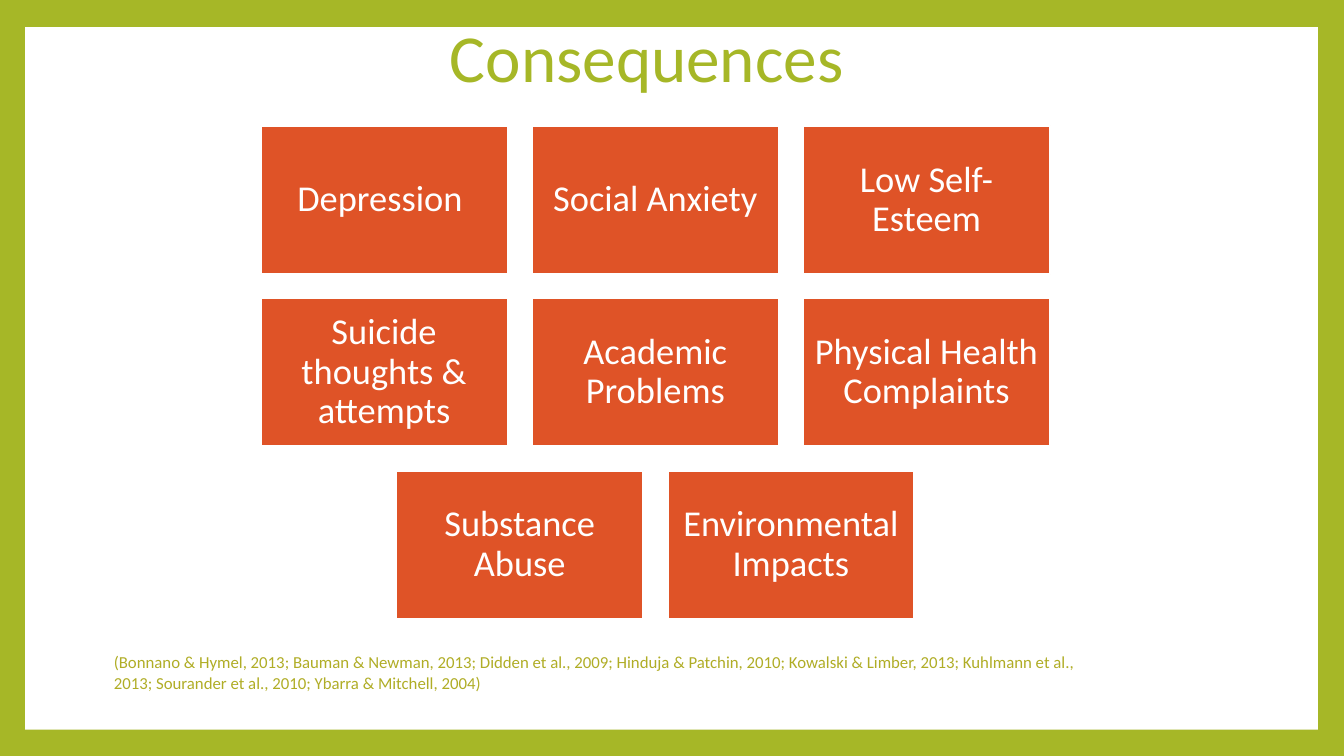
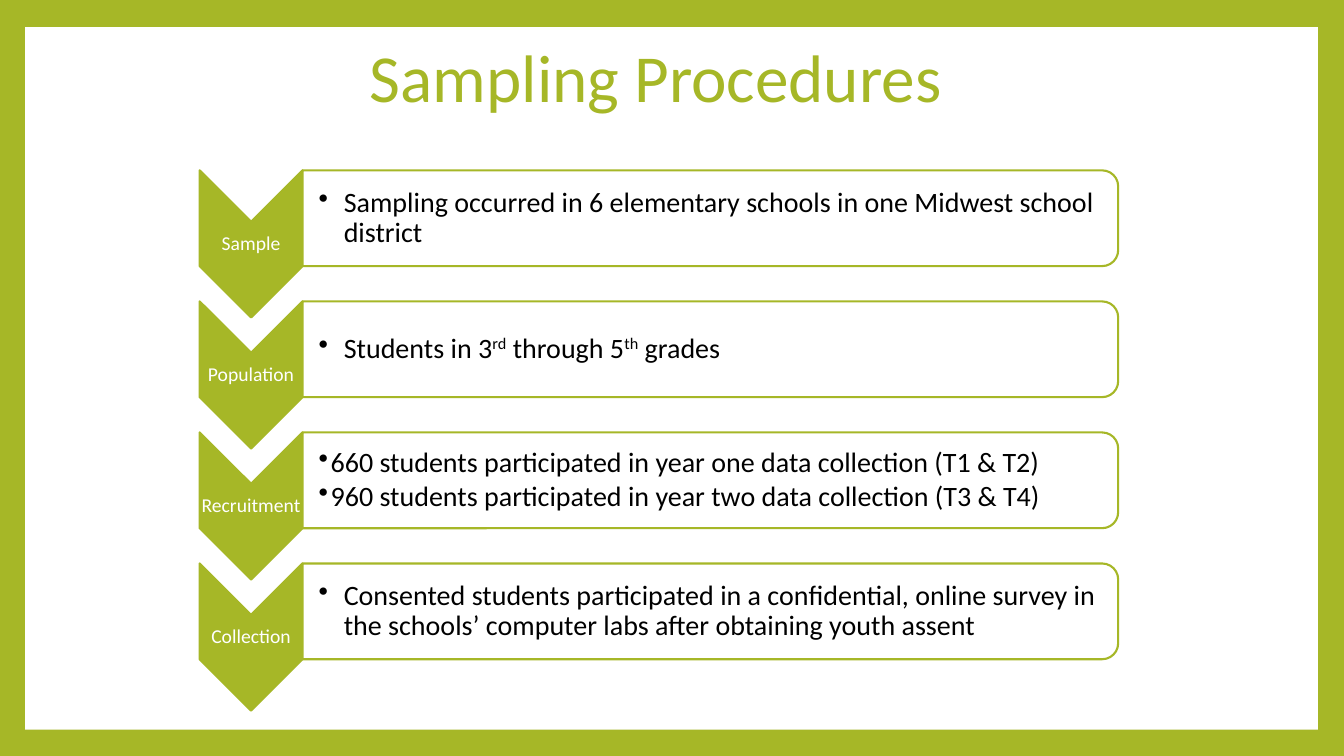
"""Build two slides on the consequences studied and the sampling procedures."""
from dataclasses import dataclass

from lxml.etree import SubElement
from pptx import Presentation
from pptx.dml.color import RGBColor
from pptx.enum.shapes import MSO_SHAPE
from pptx.enum.text import MSO_ANCHOR, PP_ALIGN
from pptx.oxml.ns import qn
from pptx.util import Inches, Pt


@dataclass(frozen=True)
class Theme:
    font: str = "Calibri"
    green: str = "A6B727"
    olive: str = "B0AD26"
    orange: str = "DF5327"
    white: str = "FFFFFF"
    black: str = "000000"
    title: int = 48
    tile: int = 26
    body: int = 20
    label: int = 14
    citation: int = 12
    outline: float = 1.5


THEME = Theme()

CONSEQUENCES = [
    ["Depression ", "Social Anxiety", "Low Self-Esteem"],
    ["Suicide thoughts & attempts", "Academic Problems", "Physical Health Complaints"],
    ["Substance Abuse", "Environmental Impacts"],
]
CITATION = (
    "(Bonnano & Hymel, 2013; Bauman & Newman, 2013; Didden et al., 2009; "
    "Hinduja & Patchin, 2010; Kowalski & Limber, 2013; Kuhlmann et al., 2013; "
    "Sourander et al., 2010; Ybarra & Mitchell, 2004)"
)

SUPERSCRIPTS = ("rd", "th")
STEPS = [
    ("Sample", 0.25, [["Sampling occurred in 6 elementary schools in one Midwest school district"]]),
    ("Population", 0.25, [["Students in 3", "rd", " through 5", "th", " grades"]]),
    ("Recruitment", 0.12, [
        ["660 students participated in year one data collection (T1 & T2)"],
        ["960 students participated in year two data collection (T3 & T4)"],
    ]),
    ("Collection", 0.25, [[
        "Consented students participated in a confidential, online survey in "
        "the schools’ computer labs after obtaining youth assent"
    ]]),
]


def rgb(color):
    return RGBColor.from_string(color)


def add_block(slide, preset, box, fill, outline=None, rotation=0):
    block = slide.shapes.add_shape(preset, *map(Inches, box))
    block.shadow.inherit = False
    block.rotation = rotation
    block.fill.solid()
    block.fill.fore_color.rgb = rgb(fill)
    if outline:
        block.line.color.rgb = rgb(outline)
        block.line.width = Pt(THEME.outline)
    else:
        block.line.fill.background()
    return block


def add_turned_block(slide, preset, box, fill, outline):
    """Add a block turned a quarter clockwise so that it fills the given box."""
    left, top, width, height = box
    shift = (width - height) / 2
    return add_block(slide, preset, (left + shift, top - shift, height, width), fill, outline, 90)


def write(shape, paragraphs, size, color, align=PP_ALIGN.CENTER, anchor=MSO_ANCHOR.MIDDLE,
          insets=(0.1, 0.05, 0.1, 0.05), spacing=0.9, after=0, indent=0):
    frame = shape.text_frame
    frame.word_wrap = True
    frame.vertical_anchor = anchor
    frame.margin_left, frame.margin_top, frame.margin_right, frame.margin_bottom = map(Inches, insets)
    for index, runs in enumerate(paragraphs):
        paragraph = frame.add_paragraph() if index else frame.paragraphs[0]
        paragraph.alignment = align
        paragraph.line_spacing = spacing
        paragraph.space_after = Pt(after)
        paragraph.font.name = THEME.font
        paragraph.font.size = Pt(size)
        paragraph.font.color.rgb = rgb(color)
        for text in runs:
            run = paragraph.add_run()
            run.text = text
            if text in SUPERSCRIPTS:
                run.font._element.set("baseline", "30000")
        if indent:
            add_bullet(paragraph, indent)


def add_bullet(paragraph, indent):
    properties = paragraph._p.get_or_add_pPr()
    properties.set("marL", str(Inches(indent)))
    properties.set("indent", str(-Inches(indent)))
    bullet = SubElement(properties, qn("a:buChar"))
    bullet.set("char", "•")
    defaults = properties.find(qn("a:defRPr"))
    if defaults is not None:
        defaults.addprevious(bullet)


def add_text(slide, box, paragraphs, size, color, **style):
    write(slide.shapes.add_textbox(*map(Inches, box)), paragraphs, size, color, **style)


def add_framed_slide(deck, title, title_box, anchor):
    slide = deck.slides.add_slide(deck.slide_layouts[6])
    slide.background.fill.solid()
    slide.background.fill.fore_color.rgb = rgb(THEME.green)
    add_block(slide, MSO_SHAPE.RECTANGLE, (0.25, 0.27, 12.82, 6.97), THEME.white)
    add_text(slide, title_box, [[title]], THEME.title, THEME.green, anchor=anchor)
    return slide


def build_consequences(deck):
    slide = add_framed_slide(deck, "Consequences", (1.66, -0.02, 9.51, 1.25), MSO_ANCHOR.MIDDLE)
    add_text(slide, (1.03, 6.42, 9.75, 0.5), [[CITATION]], THEME.citation, THEME.olive,
             align=PP_ALIGN.LEFT, anchor=MSO_ANCHOR.TOP, spacing=1)
    center, top, width, height, gap = 6.5, 1.25, 2.45, 1.47, 0.24
    for row, names in enumerate(CONSEQUENCES):
        left = center - (len(names) * (width + gap) - gap) / 2
        for column, name in enumerate(names):
            box = (left + column * (width + gap), top + row * (height + gap), width, height)
            tile = add_block(slide, MSO_SHAPE.RECTANGLE, box, THEME.orange, THEME.white)
            write(tile, [[name]], THEME.tile, THEME.white, insets=(0.11,) * 4)


def build_sampling(deck):
    slide = add_framed_slide(deck, "Sampling Procedures", (1.03, 0.39, 10.95, 1.04), MSO_ANCHOR.TOP)
    left, first_top, pitch = 1.98, 1.69, 1.3
    arrow_width, arrow_height, panel_width, panel_height = 1.02, 1.46, 8.09, 0.95
    panel_left = left + arrow_width
    for index, (label, indent, details) in enumerate(STEPS):
        top = first_top + index * pitch
        add_turned_block(slide, MSO_SHAPE.CHEVRON, (left, top, arrow_width, arrow_height),
                         THEME.green, THEME.green)
        add_text(slide, (left, top + arrow_width / 2, arrow_width, arrow_height - arrow_width),
                 [[label]], THEME.label, THEME.white, insets=(0.01,) * 4)
        add_turned_block(slide, MSO_SHAPE.ROUND_2_SAME_RECTANGLE,
                         (panel_left, top, panel_width, panel_height), THEME.white, THEME.green)
        add_text(slide, (panel_left, top + 0.05, panel_width - 0.05, panel_height - 0.1),
                 details, THEME.body, THEME.black, align=PP_ALIGN.LEFT,
                 insets=(0.16, 0.01, 0.01, 0.01), after=3, indent=indent)


def main():
    deck = Presentation()
    deck.slide_width, deck.slide_height = Inches(13.33), Inches(7.5)
    build_consequences(deck)
    build_sampling(deck)
    deck.save("out.pptx")


if __name__ == "__main__":
    main()
